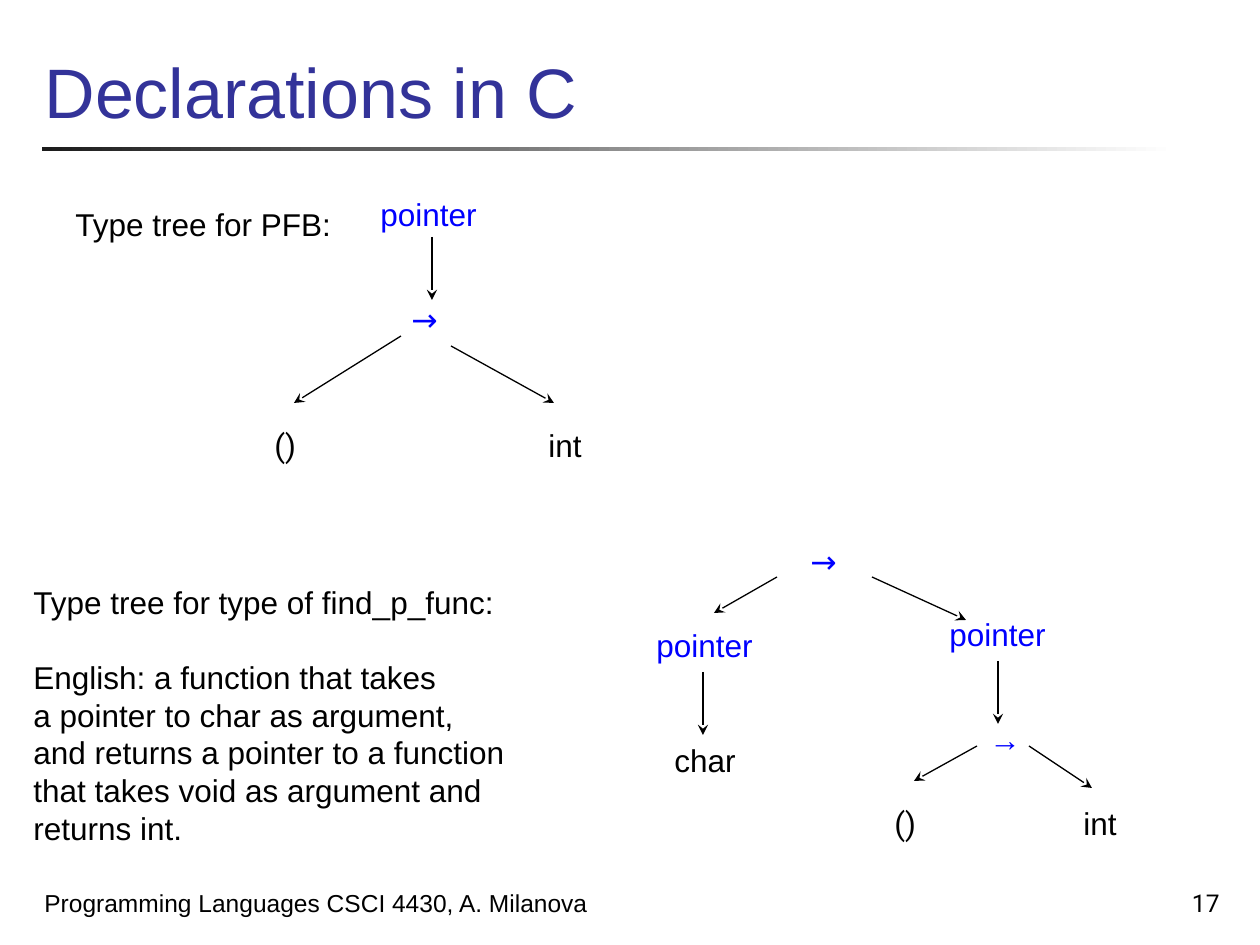
import pptx
import pptx.dml.color
import pptx.enum.shapes
import pptx.enum.text
import pptx.oxml
import pptx.oxml.ns
import pptx.util

EMU_PER_PX = 914400 / 126
BLACK, BLUE, TITLE_BLUE = "000000", "0000FF", "333399"
ANCHOR = pptx.enum.text.MSO_ANCHOR
ALIGN = pptx.enum.text.PP_ALIGN
NODE_WIDTHS = {"pointer": 122, "→": 57, "()": 49, "int": 60, "char": 87}


def px(length):
    return pptx.util.Emu(round(length * EMU_PER_PX))


def colour(value):
    return pptx.dml.color.RGBColor.from_string(value)


def set_all(target, values):
    for name, value in values.items():
        setattr(target, name, value)


class SlideBuilder:
    """Holds the text style and the current slide."""

    font = "Arial"
    size = 18
    pitch = pptx.util.Pt(21.5)

    def __init__(self, slide):
        self.slide = slide

    def place(self, shape, left, top, width, height):
        set_all(shape, {"left": px(left), "top": px(top),
                        "width": px(width), "height": px(height)})

    def add_span(self, para, text, size, ink, font):
        span = para.add_run()
        span.text = text
        set_all(span.font, {"name": font, "size": pptx.util.Pt(size)})
        span.font.color.rgb = colour(ink)

    def title(self, text, *area):
        box = self.slide.shapes.title
        self.place(box, *area)
        set_all(box.text_frame, {"vertical_anchor": ANCHOR.BOTTOM, "word_wrap": True,
                                 "auto_size": pptx.enum.text.MSO_AUTO_SIZE.NONE})
        para = box.text_frame.paragraphs[0]
        para.alignment = ALIGN.LEFT
        self.add_span(para, text, 40, TITLE_BLUE, self.font)

    def rule(self, *area):
        bar = self.slide.shapes.add_shape(
            pptx.enum.shapes.MSO_SHAPE.RECTANGLE, *map(px, area))
        bar.shadow.inherit = False
        bar.line.fill.background()
        bar.fill.gradient()
        bar.fill.gradient_angle = 0
        for stop, ink in zip(bar.fill.gradient_stops, ("1C1C1C", "FFFFFF")):
            stop.color.rgb = colour(ink)

    def footer(self, text, area, align, font):
        box = self.slide.shapes.add_textbox(*map(px, area))
        set_all(box.text_frame, {"word_wrap": True, "vertical_anchor": ANCHOR.BOTTOM})
        para = box.text_frame.paragraphs[0]
        para.alignment = align
        self.add_span(para, text, 14, BLACK, font)

    def text(self, lines, area, ink=BLACK, font=None, gap_before=None):
        box = self.slide.shapes.add_textbox(*map(px, area))
        frame = box.text_frame
        frame.word_wrap = False
        for index, line in enumerate(lines):
            para = frame.add_paragraph() if index else frame.paragraphs[0]
            para.line_spacing = self.pitch
            if index == gap_before:
                para.space_before = self.pitch
            self.add_span(para, line, self.size, ink, font or self.font)

    def node(self, label, left, top, font=None):
        ink = BLUE if label in ("pointer", "→") else BLACK
        self.text([label], (left, top, NODE_WIDTHS[label], 50), ink, font)

    def arrow(self, *ends):
        connector = self.slide.shapes.add_connector(
            pptx.enum.shapes.MSO_CONNECTOR.STRAIGHT, *map(px, ends))
        connector.line.width = pptx.util.Pt(0.75)
        connector.line.color.rgb = colour(BLACK)
        namespace = pptx.oxml.ns.nsdecls("a")
        properties = connector.element.spPr
        properties.get_or_add_ln().append(
            pptx.oxml.parse_xml(f'<a:tailEnd {namespace} type="stealth"/>'))
        properties.append(pptx.oxml.parse_xml(f"<a:effectLst {namespace}/>"))

    def tree(self, nodes, arrows):
        for node in nodes:
            self.node(*node)
        for ends in arrows:
            self.arrow(*ends)


def main():
    deck = pptx.Presentation()
    set_all(deck, {"slide_width": px(1260), "slide_height": px(945)})
    page = SlideBuilder(deck.slides.add_slide(deck.slide_layouts[5]))

    # Title, rule and footer
    page.rule(42, 147, 1134, 4)
    page.title("Declarations in C", 32, 0, 1200, 139)
    page.footer("Programming Languages CSCI 4430, A. Milanova",
                (32, 861, 651, 63), ALIGN.LEFT, "Arial")
    page.footer("17", (970, 861, 262, 63), ALIGN.RIGHT, "Roboto")

    # Type tree for PFB
    page.text(["Type tree for PFB:"], (63, 199, 284, 50))
    page.tree(
        [("pointer", 368, 189), ("→", 399, 294, "Roboto"),
         ("()", 262, 420, "Roboto"), ("int", 536, 420)],
        [(432, 237, 432, 300), (401, 336, 294, 403), (451, 346, 554, 403)])

    # Type tree for find_p_func
    page.text(["Type tree for type of find_p_func:",
               "English: a function that takes",
               "a pointer to char as argument,",
               "and returns a pointer to a function",
               "that takes void as argument and",
               "returns int."], (21, 577, 505, 277), gap_before=1)
    page.tree(
        [("→", 798, 536, "Roboto"), ("pointer", 644, 620), ("char", 662, 735),
         ("pointer", 937, 609), ("→", 977, 714),
         ("()", 882, 798, "Roboto"), ("int", 1071, 798)],
        [(777, 577, 714, 613), (872, 577, 966, 620), (703, 672, 703, 735),
         (998, 661, 998, 724), (977, 746, 914, 781), (1029, 746, 1092, 788)])

    deck.save("out.pptx")


if __name__ == "__main__":
    main()
